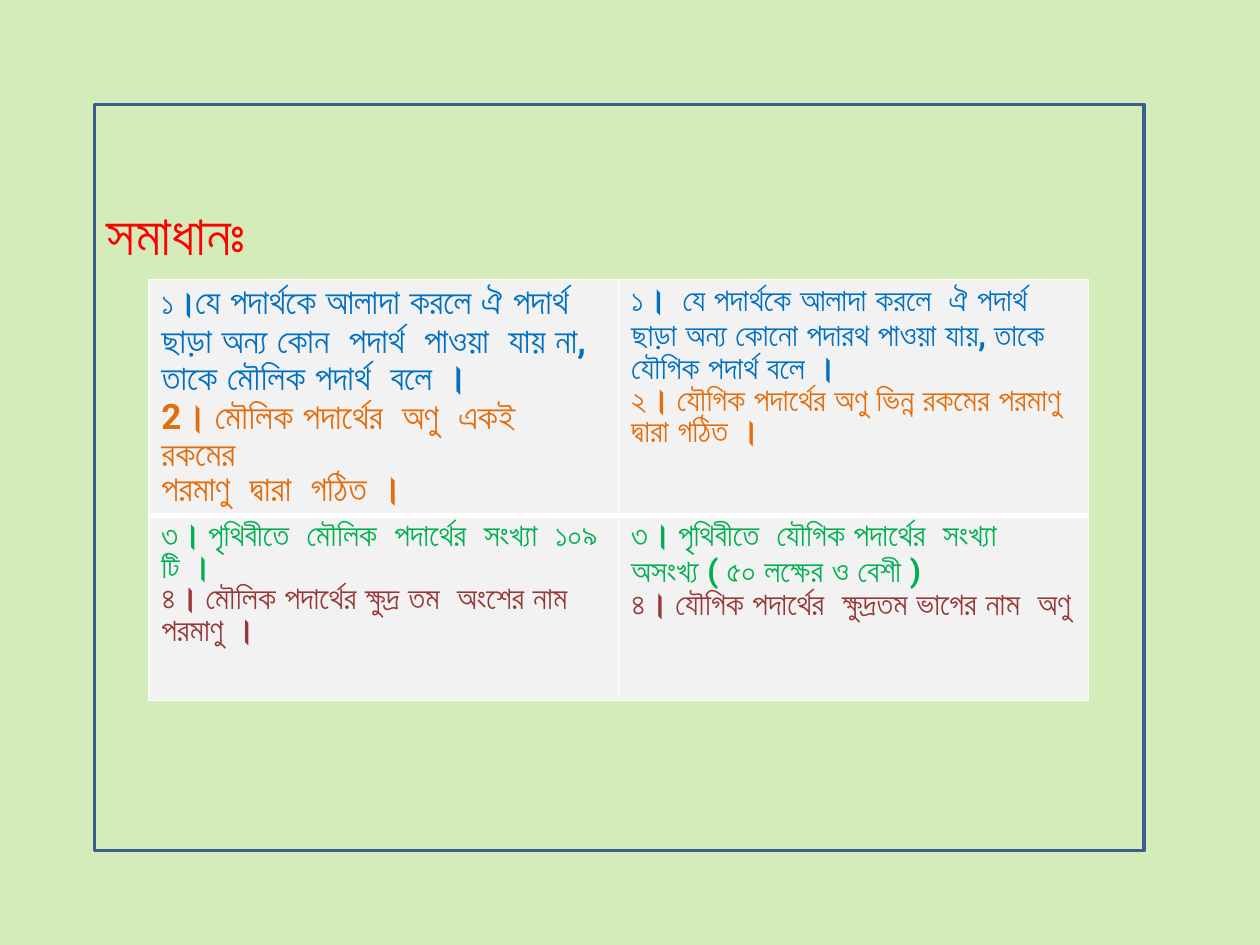
from lxml.etree import SubElement
from pptx import Presentation
from pptx.dml.color import RGBColor as RGB
from pptx.enum.shapes import MSO_SHAPE as Shape
from pptx.enum.text import MSO_ANCHOR as Anchor, PP_ALIGN as Align
from pptx.oxml.ns import qn
from pptx.util import Inches, Pt

FONT = "Roboto"
LIME = RGB(0xD4, 0xEC, 0xBA)
NAVY = RGB(0x3A, 0x5F, 0x8C)
GREY = RGB(0xF2, 0xF2, 0xF2)
RED = RGB(0xFF, 0x00, 0x00)
BLUE = RGB(0x00, 0x70, 0xC0)
ORANGE = RGB(0xE4, 0x6C, 0x0A)
GREEN = RGB(0x00, 0xB0, 0x50)
MAROON = RGB(0x95, 0x37, 0x35)

TITLE = "সমাধানঃ"
# Rows of cells; a cell lists paragraphs of (colour, runs), a run is (text, size)
CELLS = [
    [
        [
            (BLUE, [("১।", 18),
                    ("যে পদার্থকে আলাদা করলে ঐ পদার্থ  ছাড়া অন্য কোন  পদার্থ  "
                     "পাওয়া  যায় না, তাকে মৌলিক পদার্থ  বলে ।", 20)]),
            (ORANGE, [("2। মৌলিক পদার্থের  অণু  একই  রকমের", 20)]),
            (ORANGE, [("পরমাণু  দ্বারা  গঠিত ।", 20)]),
        ],
        [
            (BLUE, [("১।  যে পদার্থকে আলাদা করলে  ঐ পদার্থ ছাড়া অন্য কোনো "
                     "পদারথ পাওয়া যায়, তাকে  যৌগিক পদার্থ বলে ।", 18)]),
            (ORANGE, [("২। যৌগিক পদার্থের অণু ভিন্ন রকমের পরমাণু দ্বারা গঠিত ।", 18)]),
        ],
    ],
    [
        [
            (GREEN, [("৩। পৃথিবীতে  মৌলিক  পদার্থের  সংখ্যা  ১০৯ টি ।", 18)]),
            (MAROON, [("৪। মৌলিক পদার্থের ক্ষুদ্র তম  অংশের নাম পরমাণু ।", 18)]),
        ],
        [
            (GREEN, [("৩। পৃথিবীতে  যৌগিক পদার্থের  সংখ্যা  অসংখ্য "
                      "( ৫০ লক্ষের ও বেশী )", 18)]),
            (MAROON, [("৪। যৌগিক পদার্থের  ক্ষুদ্রতম ভাগের নাম  অণু", 18)]),
        ],
    ],
]
FRAME = (0.75, 0.83, 8.33, 5.92)
GRID = (1.18, 2.22, 7.46, 3.34)
ROWS = (1.87, 1.47)
THIN, THICK = 1, 3


def add_run(para, text, size, color):
    run = para.add_run()
    run.text = text
    font = run.font
    font.name, font.size, font.bold = FONT, Pt(size), True
    font.color.rgb = color


def add_edges(cell, widths):
    """Draw white borders; widths run left, right, top, bottom in points."""
    props = cell._tc.get_or_add_tcPr()
    for spot, (side, width) in enumerate(zip("LRTB", widths)):
        line = props.makeelement(qn(f"a:ln{side}"), {"w": str(Pt(width))})
        fill = SubElement(line, qn("a:solidFill"))
        SubElement(fill, qn("a:srgbClr"), val="FFFFFF")
        props.insert(spot, line)


def add_frame(slide):
    box = slide.shapes.add_shape(Shape.RECTANGLE, *map(Inches, FRAME))
    box.shadow.inherit = False
    box.fill.background()
    box.line.color.rgb = NAVY
    box.line.width = Pt(2)
    text = box.text_frame
    text.word_wrap = True
    text.vertical_anchor = Anchor.TOP
    text.margin_top = Inches(0.75)
    para = text.paragraphs[0]
    para.alignment = Align.LEFT
    add_run(para, TITLE, 32, RED)


def add_grid(slide):
    table = slide.shapes.add_table(len(CELLS), len(CELLS[0]), *map(Inches, GRID)).table
    for row, high in zip(table.rows, ROWS):
        row.height = Inches(high)
    for r, row in enumerate(CELLS):
        edges = (THIN, THIN, THICK if r else THIN, THIN if r else THICK)
        for c, paras in enumerate(row):
            cell = table.cell(r, c)
            cell.fill.solid()
            cell.fill.fore_color.rgb = GREY
            add_edges(cell, edges)
            text = cell.text_frame
            for n, (color, runs) in enumerate(paras):
                para = text.add_paragraph() if n else text.paragraphs[0]
                for words, size in runs:
                    add_run(para, words, size, color)


def main():
    deck = Presentation()
    deck.slide_width, deck.slide_height = Inches(10), Inches(7.5)
    slide = deck.slides.add_slide(deck.slide_layouts[6])
    slide.background.fill.solid()
    slide.background.fill.fore_color.rgb = LIME
    add_frame(slide)
    add_grid(slide)
    deck.save("out.pptx")


if __name__ == "__main__":
    main()
